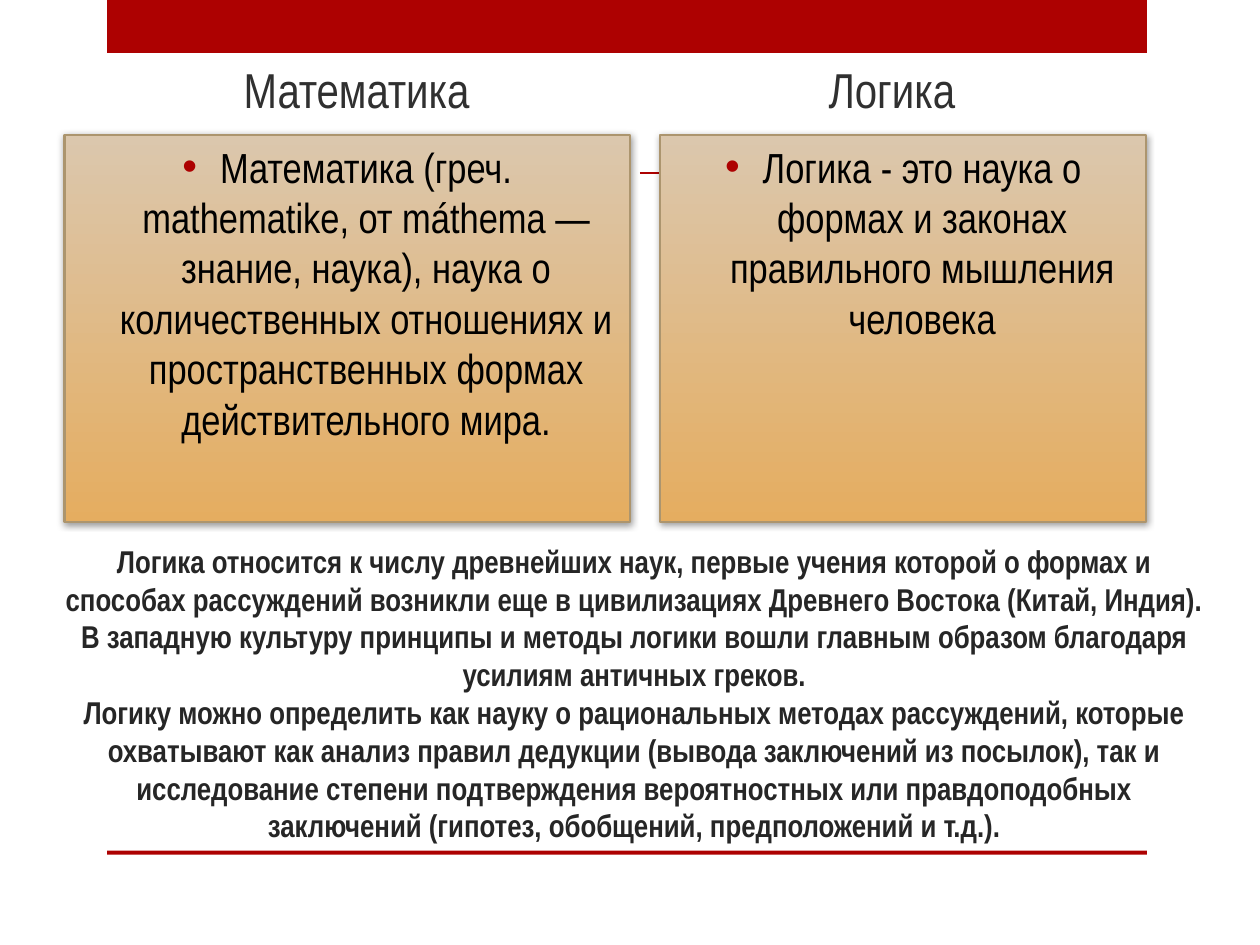
import pptx
import pptx.dml.color
import pptx.enum.shapes
import pptx.enum.text
import pptx.oxml
import pptx.oxml.ns
import pptx.util
from pptx.util import Cm

RED = "AD0101"
NS = pptx.oxml.ns.nsdecls("a")


def rgb(value):
    return pptx.dml.color.RGBColor.from_string(value)


class Deck:
    font = "Arial Narrow"
    anchors = pptx.enum.text.MSO_ANCHOR

    def __init__(self, width, height):
        self.prs = pptx.Presentation()
        self.prs.slide_width, self.prs.slide_height = Cm(width), Cm(height)
        self.slide = self.prs.slides.add_slide(self.prs.slide_layouts[6])

    def rectangle(self, left, top, width, height, fill=None):
        kind = pptx.enum.shapes.MSO_SHAPE.RECTANGLE
        shape = self.slide.shapes.add_shape(
            kind, Cm(left), Cm(top), Cm(width), Cm(height))
        shape.shadow.inherit = False
        if fill:
            shape.fill.solid()
            shape.fill.fore_color.rgb = rgb(fill)
            shape.line.fill.background()
        return shape

    def rule(self, left, right, y):
        line = self.slide.shapes.add_connector(
            pptx.enum.shapes.MSO_CONNECTOR.STRAIGHT,
            Cm(left), Cm(y), Cm(right), Cm(y))
        line.line.color.rgb = rgb(RED)
        line.line.width = pptx.util.Pt(1.25)
        line._element.spPr.append(pptx.oxml.parse_xml(f"<a:effectLst {NS}/>"))

    def fill_text(self, shape, lines, size, color, anchor, bold=False,
                  bullet=False):
        frame = shape.text_frame
        frame.word_wrap = True
        frame.vertical_anchor = anchor
        paragraph = frame.paragraphs[0]
        paragraph.alignment = pptx.enum.text.PP_ALIGN.CENTER
        if bullet:
            self.bullet(paragraph)
        for number, line in enumerate(lines):
            if number:
                paragraph.add_line_break()
            run = paragraph.add_run()
            run.text = line
            run.font.name = self.font
            run.font.size = pptx.util.Pt(size)
            run.font.bold = bold
            run.font.color.rgb = rgb(color)

    def bullet(self, paragraph):
        props = paragraph._p.get_or_add_pPr()
        props.set("marL", str(Cm(0.76)))
        props.set("indent", str(Cm(-0.76)))
        for xml in (f'<a:buClr {NS}><a:srgbClr val="{RED}"/></a:buClr>',
                    f'<a:buFont {NS} typeface="Arial"/>',
                    f'<a:buChar {NS} char="•"/>'):
            props.append(pptx.oxml.parse_xml(xml))

    def text(self, left, top, width, height, lines, size, color, bold=False,
             bottom_inset=0.13):
        box = self.slide.shapes.add_textbox(
            Cm(left), Cm(top), Cm(width), Cm(height))
        box.text_frame.margin_bottom = Cm(bottom_inset)
        self.fill_text(box, lines, size, color, self.anchors.BOTTOM, bold)

    def card(self, left, top, width, height, definition):
        card = self.rectangle(left, top, width, height)
        card.fill.gradient()
        card.fill.gradient_angle = 270
        for stop, position, color in zip(
                card.fill.gradient_stops, (0, 1), ("DBC7AD", "E5AD60")):
            stop.position = position
            stop.color.rgb = rgb(color)
        card.line.color.rgb = rgb("AC956E")
        card.line.width = pptx.util.Pt(1.25)
        effects = card._element.spPr.find(pptx.oxml.ns.qn("a:effectLst"))
        effects.append(pptx.oxml.parse_xml(
            f'<a:outerShdw {NS} blurRad="{pptx.util.Pt(4)}" '
            f'dist="{pptx.util.Pt(1)}" dir="{88 * 60000}" rotWithShape="0">'
            '<a:srgbClr val="000000"><a:alpha val="40000"/></a:srgbClr>'
            '</a:outerShdw>'))
        self.fill_text(card, [definition], 24, "000000", self.anchors.TOP,
                       bullet=True)


def main():
    deck = Deck(25.4, 19.05)

    # Red frame: top band and bottom strip
    for top, height in ((0, 1.07), (17.15, 0.08)):
        deck.rectangle(2.16, top, 20.96, height, RED)

    # Rules under the two headings
    column_lefts, column_width = (2.11, 12.9), 10.16
    for left in column_lefts:
        deck.rule(left, left + column_width, 3.48)

    # History and definition of logic
    history = [
        "Логика относится к числу древнейших наук, первые учения которой о "
        "формах и способах рассуждений возникли еще в цивилизациях Древнего "
        "Востока (Китай, Индия). В западную культуру принципы и методы логики "
        "вошли главным образом благодаря усилиям античных греков.",
        "Логику можно определить как науку о рациональных методах "
        "рассуждений, которые охватывают как анализ правил дедукции (вывода "
        "заключений из посылок), так и исследование степени подтверждения "
        "вероятностных или правдоподобных заключений (гипотез, обобщений, "
        "предположений и т.д.).",
    ]
    deck.text(0.89, 10.72, 23.8, 7.19, history, 18, "262626", bold=True,
              bottom_inset=0.89)

    # Two sciences: heading and definition card
    sciences = (
        ("Математика", 1.3, 11.4,
         "Математика (греч. mathematike, от máthema — знание, наука), наука о "
         "количественных отношениях и пространственных формах "
         "действительного мира."),
        ("Логика", 13.31, 9.8,
         "Логика - это наука о формах и законах правильного мышления "
         "человека"),
    )
    for left, (name, card_left, card_width, definition) in zip(
            column_lefts, sciences):
        deck.text(left, 0.91, column_width, 1.6, [name], 28, "303030")
        deck.card(card_left, 2.72, card_width, 7.8, definition)

    deck.prs.save("out.pptx")


if __name__ == "__main__":
    main()
